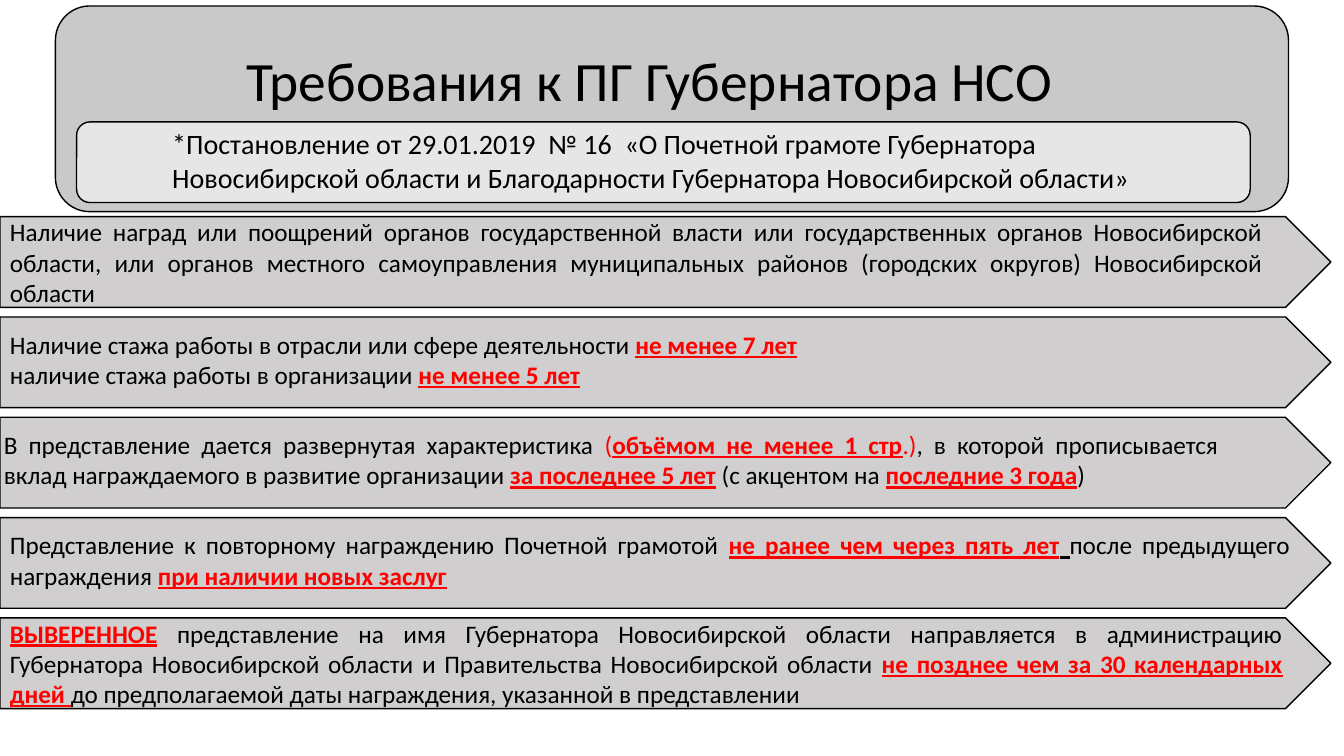
from lxml.etree import SubElement
from pptx import Presentation
from pptx.dml.color import RGBColor
from pptx.enum.shapes import MSO_SHAPE as Shape
from pptx.enum.text import MSO_ANCHOR as Anchor, PP_ALIGN as Align
from pptx.oxml.ns import qn
from pptx.util import Inches, Pt

COLORS = {"ink": "000000", "accent": "FF0000", "arrow": "D0CECE", "panel": "E7E6E6"}
FONT = "Calibri"
PLAIN, RED, STRONG, UNDERLINED = (
    ("ink", False), ("accent", False), ("accent", True), ("ink", True))

TITLE = [[("Требования к ПГ Губернатора НСО", PLAIN)]]
DECREE = [[("*Постановление от 29.01.2019  № 16  «О Почетной грамоте Губернатора "
            "Новосибирской области и Благодарности Губернатора Новосибирской области»", PLAIN)]]

# left, width, lift, paragraphs
REQUIREMENTS = [
    (0, 12.62, 0, [[
        ("Наличие наград или поощрений органов государственной власти или государственных "
         "органов Новосибирской области, или органов местного самоуправления муниципальных "
         "районов (городских округов) Новосибирской области", PLAIN)]]),
    (0, 11.95, 0.03, [
        [("Наличие стажа работы в отрасли или сфере деятельности ", PLAIN),
         ("не менее 7 лет", STRONG)],
        [("наличие стажа работы в организации ", PLAIN),
         ("не менее 5 лет", STRONG)]]),
    (-0.06, 12.24, 0.03, [[
        ("В представление дается развернутая характеристика ", PLAIN),
        ("(", RED), ("объёмом не менее 1 стр", STRONG), (".)", RED),
        (", в которой прописывается вклад награждаемого в развитие организации ", PLAIN),
        ("за последнее 5 лет", STRONG), (" (с акцентом на ", PLAIN),
        ("последние 3 года", STRONG), (")", PLAIN)]]),
    (0, 12.89, 0.03, [[
        ("Представление к повторному награждению Почетной грамотой ", PLAIN),
        ("не ранее чем через пять лет", STRONG), (" ", UNDERLINED),
        ("после предыдущего награждения ", PLAIN),
        ("при наличии новых заслуг", STRONG)]]),
    (0, 12.82, 0, [[
        ("ВЫВЕРЕННОЕ", STRONG),
        (" представление на имя Губернатора Новосибирской области направляется в "
         "администрацию Губернатора Новосибирской области и Правительства "
         "Новосибирской области ", PLAIN),
        ("не позднее чем за 30 календарных дней ", STRONG),
        ("до предполагаемой даты награждения, указанной в представлении", PLAIN)]]),
]

ARROW_TOP, ARROW_STEP, ARROW_WIDTH, ARROW_HEIGHT = 2.15, 0.995, 13.2, 0.9


def color(name):
    return RGBColor.from_string(COLORS[name])


def add_panel(page, kind, area, fill, alpha=None):
    panel = page.shapes.add_shape(kind, *map(Inches, area))
    panel.shadow.inherit = False
    panel.fill.solid()
    panel.fill.fore_color.rgb = color(fill)
    panel.line.color.rgb = color("ink")
    panel.line.width = Pt(1)
    if alpha is not None:
        tint = panel.fill._xPr.find(qn("a:solidFill"))[0]
        SubElement(tint, qn("a:alpha")).set("val", str(alpha * 1000))


def add_text(page, area, paragraphs, size, align=Align.LEFT, anchor=Anchor.MIDDLE):
    box = page.shapes.add_textbox(*map(Inches, area))
    frame = box.text_frame
    frame.word_wrap = True
    frame.vertical_anchor = anchor
    for index, spans in enumerate(paragraphs):
        para = frame.add_paragraph() if index else frame.paragraphs[0]
        para.alignment = align
        for text, (ink, strong) in spans:
            span = para.add_run()
            span.text = text
            font = span.font
            font.name, font.size = FONT, Pt(size)
            font.bold = font.underline = strong
            font.color.rgb = color(ink)


def main():
    deck = Presentation()
    deck.slide_width, deck.slide_height = Inches(13.33), Inches(7.5)
    page = deck.slides.add_slide(deck.slide_layouts[6])

    add_panel(page, Shape.ROUNDED_RECTANGLE, (0.55, 0.06, 12.23, 2.04), "ink", alpha=21)
    add_text(page, (2.35, 0.4, 10.4, 0.78), TITLE, 39.6)
    add_panel(page, Shape.ROUNDED_RECTANGLE, (0.76, 1.21, 11.64, 0.8), "panel")
    add_text(page, (1.61, 1.21, 10.22, 0.8), DECREE, 20, anchor=Anchor.TOP)

    for row, (left, width, lift, paragraphs) in enumerate(REQUIREMENTS):
        top = ARROW_TOP + row * ARROW_STEP
        add_panel(page, Shape.PENTAGON, (0, top, ARROW_WIDTH, ARROW_HEIGHT), "arrow")
        add_text(page, (left, top - lift, width, ARROW_HEIGHT), paragraphs, 18, Align.JUSTIFY)

    deck.save("out.pptx")


if __name__ == "__main__":
    main()
